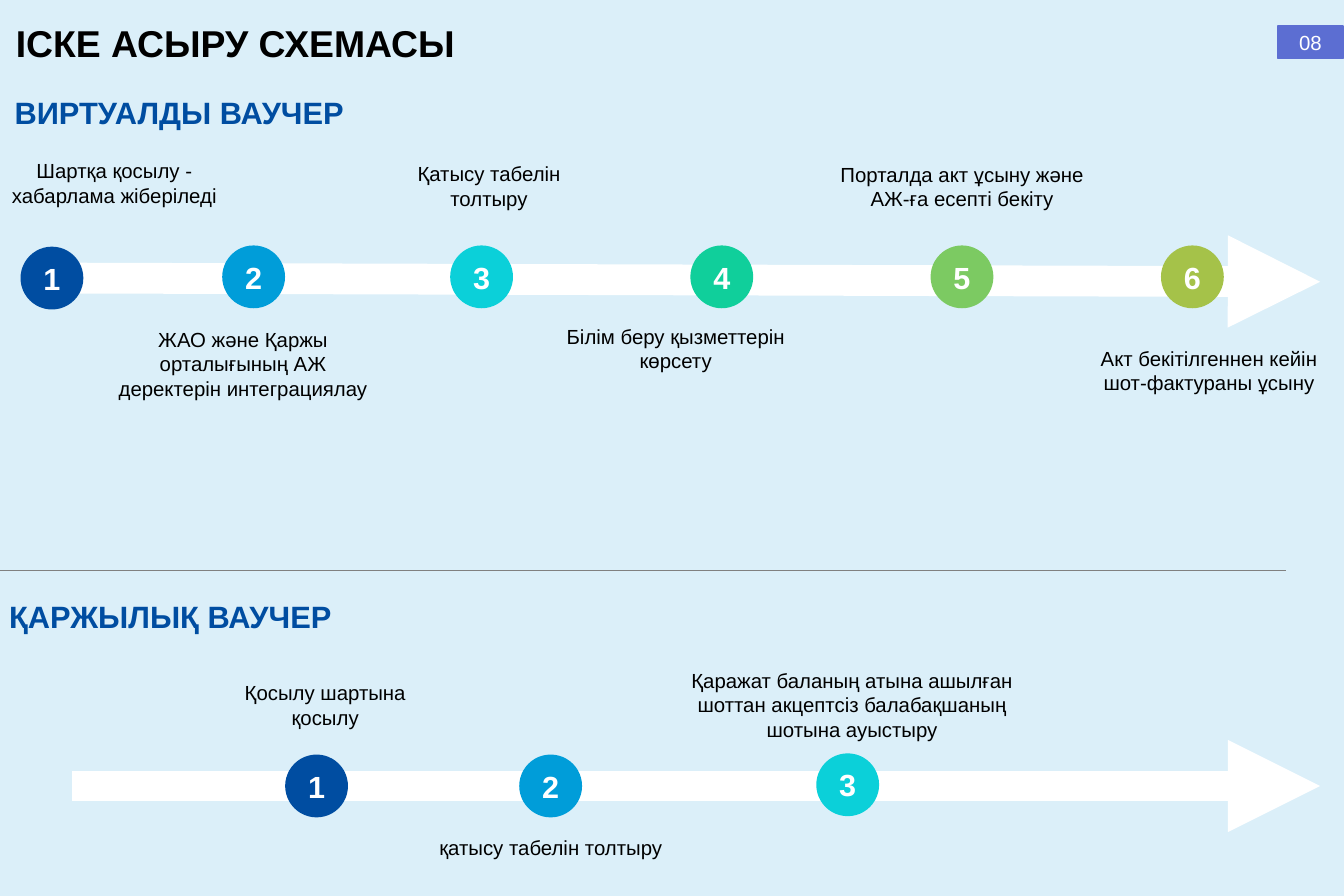
from pptx import Presentation
from pptx.dml.color import RGBColor
from pptx.enum.shapes import MSO_CONNECTOR, MSO_SHAPE
from pptx.enum.text import MSO_ANCHOR, MSO_AUTO_SIZE, PP_ALIGN
from pptx.oxml.ns import qn
from pptx.util import Inches, Pt
from lxml import etree

OVAL, RECT = MSO_SHAPE.OVAL, MSO_SHAPE.RECTANGLE
LINE = MSO_CONNECTOR.STRAIGHT
MIDDLE = MSO_ANCHOR.MIDDLE
LEFT, MID = PP_ALIGN.LEFT, PP_ALIGN.CENTER
GROW, FIXED = MSO_AUTO_SIZE.SHAPE_TO_FIT_TEXT, MSO_AUTO_SIZE.NONE

SKY = RGBColor(0xDB, 0xEF, 0xF9)
BLACK = RGBColor(0, 0, 0)
WHITE = RGBColor(255, 255, 255)
GREY = RGBColor(0x80, 0x80, 0x80)
NAVY = RGBColor(0x00, 0x4D, 0xA1)
BLUE = RGBColor(0x00, 0x9D, 0xD9)
CYAN = RGBColor(0x0B, 0xD0, 0xD9)
MINT = RGBColor(0x10, 0xCF, 0x9B)
GREEN = RGBColor(0x7C, 0xCA, 0x62)
OLIVE = RGBColor(0xA5, 0xC2, 0x49)
VIOLET = RGBColor(0x5C, 0x6E, 0xD2)
HUES = [NAVY, BLUE, CYAN, MINT, GREEN, OLIVE]

# Each step: circle left and top, label box, label text
VIRTUAL = [
    (0.35, 4.05, (-0.21, 2.54, 4.16, 0.91), "Шартқа қосылу - хабарлама жіберіледі"),
    (3.65, 4.03, (1.77, 5.3, 4.41, 1.31),
     "ЖАО және Қаржы орталығының АЖ деректерін интеграциялау"),
    (7.38, 4.03, (6.14, 2.59, 3.72, 0.91), "Қатысу табелін толтыру"),
    (11.31, 4.03, (8.58, 5.25, 4.95, 0.91), "Білім беру қызметтерін көрсету"),
    (15.24, 4.03, (13.53, 2.6, 4.42, 0.91),
     "Порталда акт ұсыну және АЖ-ға есепті бекіту"),
    (19.01, 4.03, (17.78, 5.61, 4, 0.91),
     "Акт бекітілгеннен кейін шот-фактураны ұсыну"),
]
FINANCE = [
    (4.68, 12.36, (3.65, 11.08, 3.34, 0.91), "Қосылу шартына қосылу"),
    (8.51, 12.36, (6.8, 13.61, 4.42, 0.5), "қатысу табелін толтыру"),
    (13.37, 12.34, (10.99, 10.88, 5.9, 1.31),
     "Қаражат баланың атына ашылған шоттан акцептсіз балабақшаның шотына ауыстыру"),
]


class Board:
    styles = {
        "title": {"size": Pt(44), "bold": True},
        "head": {"size": Pt(36.3), "bold": True},
        "label": {"size": Pt(24), "bold": False},
        "number": {"size": Pt(36), "bold": True},
    }

    def __init__(self, slide):
        self.slide = slide
        fill = slide.background.fill
        fill.solid()
        fill.fore_color.rgb = SKY

    def words(self, frame, text, style, color, align):
        para = frame.paragraphs[0]
        para.alignment = align
        run = para.add_run()
        run.text = text
        for name, value in {"name": "Arial", **self.styles[style]}.items():
            setattr(run.font, name, value)
        run.font.color.rgb = color

    def label(self, box, text, style, color=BLACK, align=LEFT, wrap=True):
        frame = self.slide.shapes.add_textbox(*map(Inches, box)).text_frame
        for name, value in {"word_wrap": wrap, "auto_size": GROW}.items():
            setattr(frame, name, value)
        self.words(frame, text, style, color, align)

    def badge(self, kind, box, text, style, color):
        shape = self.slide.shapes.add_shape(kind, *map(Inches, box))
        shape.shadow.inherit = False
        shape.fill.solid()
        shape.fill.fore_color.rgb = shape.line.color.rgb = color
        shape.line.width = Pt(2)
        form = {"vertical_anchor": MIDDLE, "auto_size": FIXED}
        for name, value in form.items():
            setattr(shape.text_frame, name, value)
        self.words(shape.text_frame, text, style, WHITE, MID)

    def line(self, ends, color, width, arrow=False):
        link = self.slide.shapes.add_connector(LINE, *map(Inches, ends))
        link.line.color.rgb = color
        link.line.width = Pt(width)
        props = link.element.spPr
        if arrow:
            etree.SubElement(props.find(qn("a:ln")), qn("a:tailEnd"), type="triangle")
        etree.SubElement(props, qn("a:effectLst"))

    def flow(self, ends, steps):
        self.line(ends, WHITE, 36.25, arrow=True)
        for num, ((left, top, box, text), hue) in enumerate(zip(steps, HUES), 1):
            self.badge(OVAL, (left, top, 1, 1), str(num), "number", hue)
            self.label(box, text, "label", align=MID)


def main():
    deck = Presentation()
    deck.slide_width, deck.slide_height = Inches(21.99), Inches(14.66)
    board = Board(deck.slides.add_slide(deck.slide_layouts[6]))

    # Title, page number and divider
    board.line((0, 9.33, 21.04, 9.33), GREY, 0.75)
    board.label((0.16, 0.28, 7.46, 0.84), "ІСКЕ АСЫРУ СХЕМАСЫ", "title", wrap=False)
    board.badge(RECT, (20.91, 0.42, 1.06, 0.54), "08", "label", VIOLET)

    # Virtual voucher
    board.label((0.14, 1.48, 9.72, 0.71), "ВИРТУАЛДЫ ВАУЧЕР", "head", NAVY)
    board.flow((1.18, 4.55, 21.6, 4.61), VIRTUAL)

    # Financial voucher
    board.label((0.05, 9.73, 9.72, 0.71), "ҚАРЖЫЛЫҚ ВАУЧЕР", "head", NAVY)
    board.flow((1.18, 12.86, 21.6, 12.86), FINANCE)

    deck.save("out.pptx")


if __name__ == "__main__":
    main()
